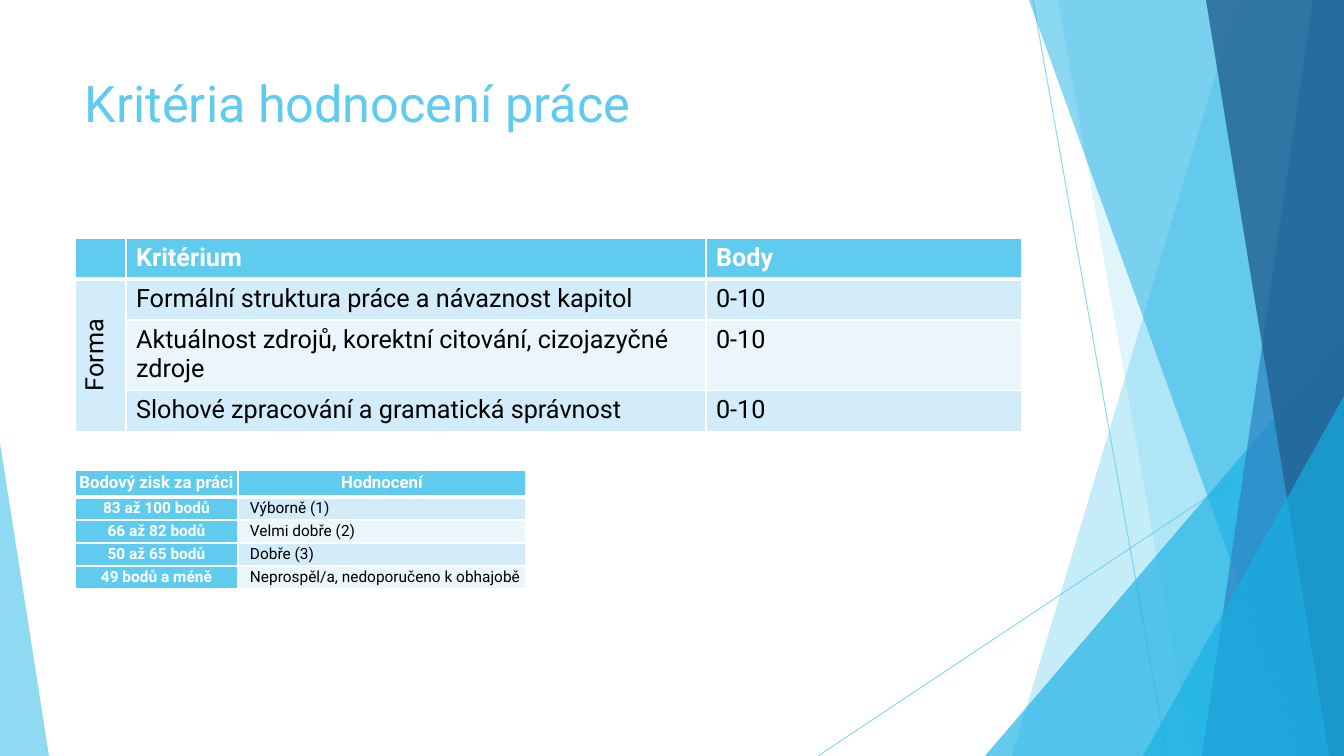
from lxml.etree import SubElement
from pptx import Presentation
from pptx.dml.color import RGBColor
from pptx.enum.shapes import MSO_CONNECTOR as Connector, MSO_SHAPE as Preset
from pptx.enum.text import MSO_ANCHOR as Anchor, PP_ALIGN as Align
from pptx.oxml.ns import qn
from pptx.util import Pt

PX = 12192000 / 1344
FONT = "Roboto"
COLORS = {
    "sky": "5FCBEF",
    "azure": "17B0E4",
    "blue": "2E83C3",
    "navy": "226292",
    "band": "D2ECF9",
    "pale": "EAF6FC",
    "white": "FFFFFF",
    "black": "000000",
}


def px(length):
    """Turn pixels into EMU."""
    return round(length * PX)


def color(name):
    """Look up a colour by name."""
    return RGBColor.from_string(COLORS[name])


def set_opacity(fill_parent, percent):
    """Make the solid colour found inside an element translucent."""
    value = fill_parent.find(".//" + qn("a:srgbClr"))
    SubElement(value, qn("a:alpha"), val=str(percent * 1000))


def paint(shape, fill, opacity):
    """Give a shape a translucent fill with no line or shadow."""
    shape.shadow.inherit = False
    shape.fill.solid()
    shape.fill.fore_color.rgb = color(fill)
    set_opacity(shape._element.spPr, opacity)
    shape.line.fill.background()


def add_ray(slide, start, end):
    """Draw a thin translucent line."""
    ray = slide.shapes.add_connector(Connector.STRAIGHT, *map(px, start + end))
    ray.line.color.rgb = color("sky")
    ray.line.width = Pt(0.75)
    properties = ray._element.spPr
    set_opacity(properties, 70)
    SubElement(properties, qn("a:effectLst"))


def add_triangle(slide, box, apex, fill, opacity):
    """Draw a triangle whose apex is a share of its width."""
    triangle = slide.shapes.add_shape(Preset.ISOSCELES_TRIANGLE, *map(px, box))
    triangle.adjustments[0] = apex
    paint(triangle, fill, opacity)


def add_facet(slide, box, top_x, bottom_x, fill, opacity):
    """Draw a panel with a slanted left side that reaches the right edge."""
    left, top, width, height = box
    right, bottom = left + width, top + height
    builder = slide.shapes.build_freeform(left + top_x, top, scale=PX)
    builder.add_line_segments(
        [(right, top), (right, bottom), (left + bottom_x, bottom)], close=True
    )
    paint(builder.convert_to_shape(), fill, opacity)


def add_facets(slide, box):
    """Layer the rays, panels and triangles of the right side."""
    left, top, width, height = box
    right, bottom = left + width, top + height

    def add_corner(x, y, fill, opacity):
        """Draw a triangle in the bottom right corner."""
        corner = (left + x, top + y, width - x, height - y)
        add_triangle(slide, corner, 1, fill, opacity)

    add_ray(slide, (left + 215, top), (left + 349, bottom))
    add_ray(slide, (right, top + 406), (left, bottom))
    add_facet(slide, box, 420, 194, "sky", 36)
    add_facet(slide, box, 240, 374, "sky", 20)
    add_corner(167, 336, "azure", 66)
    add_facet(slide, box, 211, 483, "azure", 50)
    add_facet(slide, box, 495, 384, "blue", 70)
    add_facet(slide, box, 388, 511, "navy", 80)
    add_corner(325, 396, "azure", 66)


def add_text(paragraph, text, size, ink, bold=False):
    """Add one run to a paragraph."""
    run = paragraph.add_run()
    run.text = text
    run.font.name = FONT
    run.font.size = Pt(size)
    run.font.bold = bold
    run.font.color.rgb = color(ink)


def add_title(slide, box, text):
    """Place the slide title."""
    frame = slide.shapes.add_textbox(*map(px, box)).text_frame
    frame.word_wrap = True
    frame.vertical_anchor = Anchor.TOP
    add_text(frame.paragraphs[0], text, 36, "sky")


def style_cell(cell, row, fill):
    """Set white borders, heavier under the header, and the cell fill."""
    properties = cell._tc.get_or_add_tcPr()
    heavy_sides = {0: "B", 1: "T"}
    for side in "LRTB":
        width = Pt(3 if heavy_sides.get(row) == side else 1)
        border = SubElement(properties, qn(f"a:ln{side}"), w=str(width))
        solid = SubElement(border, qn("a:solidFill"))
        SubElement(solid, qn("a:srgbClr"), val=COLORS["white"])
    cell.fill.solid()
    cell.fill.fore_color.rgb = color(fill)


def add_grid(slide, box, columns, rows):
    """Add a table with the given column widths and row heights."""
    frame = slide.shapes.add_table(len(rows), len(columns), *map(px, box))
    for column, width in zip(frame.table.columns, columns):
        column.width = px(width)
    for row, height in zip(frame.table.rows, rows):
        row.height = px(height)
    return frame.table


def band_fill(row):
    """Choose the fill of a body row."""
    return "band" if row % 2 else "pale"


def add_criteria_table(slide, box):
    """Build the table of criteria and points."""
    records = [
        ("", "Kritérium", "Body"),
        ("Forma", "Formální struktura práce a návaznost kapitol", "0-10"),
        ("", "Aktuálnost zdrojů, korektní citování, cizojazyčné zdroje", "0-10"),
        ("", "Slohové zpracování a gramatická správnost", "0-10"),
    ]
    table = add_grid(slide, box, [51, 580, 316], [41, 41, 70, 41])
    for row, record in enumerate(records):
        header = row == 0
        for column, text in enumerate(record):
            cell = table.cell(row, column)
            body_fill = band_fill(row) if column else "band"
            style_cell(cell, row, "sky" if header else body_fill)
            if text:
                ink = "white" if header else "black"
                add_text(cell.text_frame.paragraphs[0], text, 18, ink, header)
    group = table.cell(1, 0)
    group.merge(table.cell(3, 0))
    group.text_frame.paragraphs[0].alignment = Align.CENTER
    group._tc.tcPr.set("vert", "vert270")


def add_grade_table(slide, box):
    """Build the table that turns points into grades."""
    records = [
        ("Bodový zisk za práci", "Hodnocení"),
        ("83 až 100 bodů", "Výborně (1)"),
        ("66 až 82 bodů", "Velmi dobře (2)"),
        ("50 až 65 bodů", "Dobře (3)"),
        ("49 bodů a méně", "Neprospěl/a, nedoporučeno k obhajobě"),
    ]
    table = add_grid(slide, box, [163, 288], [27] + [23] * 4)
    for row, record in enumerate(records):
        for column, text in enumerate(record):
            cell = table.cell(row, column)
            strong = row == 0 or column == 0
            style_cell(cell, row, "sky" if strong else band_fill(row))
            cell.margin_left = cell.margin_right = 0
            cell.margin_top = cell.margin_bottom = 0
            paragraph = cell.text_frame.paragraphs[0]
            paragraph.line_spacing = 1.15
            paragraph.space_after = Pt(10)
            if strong:
                paragraph.alignment = Align.CENTER
            else:
                indent = paragraph._p.get_or_add_pPr()
                indent.set("marL", str(px(12)))
                indent.set("indent", "0")
            ink = "white" if strong else "black"
            add_text(paragraph, text, 11 if row else 12, ink, strong)


def main():
    """Build and save the slide."""
    presentation = Presentation()
    presentation.slide_width = px(1344)
    presentation.slide_height = px(756)
    slide = presentation.slides.add_slide(presentation.slide_layouts[6])
    add_facets(slide, (818, 0, 526, 756))
    add_triangle(slide, (0, 443, 49, 313), 0, "sky", 70)
    add_title(slide, (75, 67, 947, 146), "Kritéria hodnocení práce")
    add_criteria_table(slide, (75, 238, 947, 193))
    add_grade_table(slide, (75, 470, 451, 119))
    presentation.save("out.pptx")


if __name__ == "__main__":
    main()
